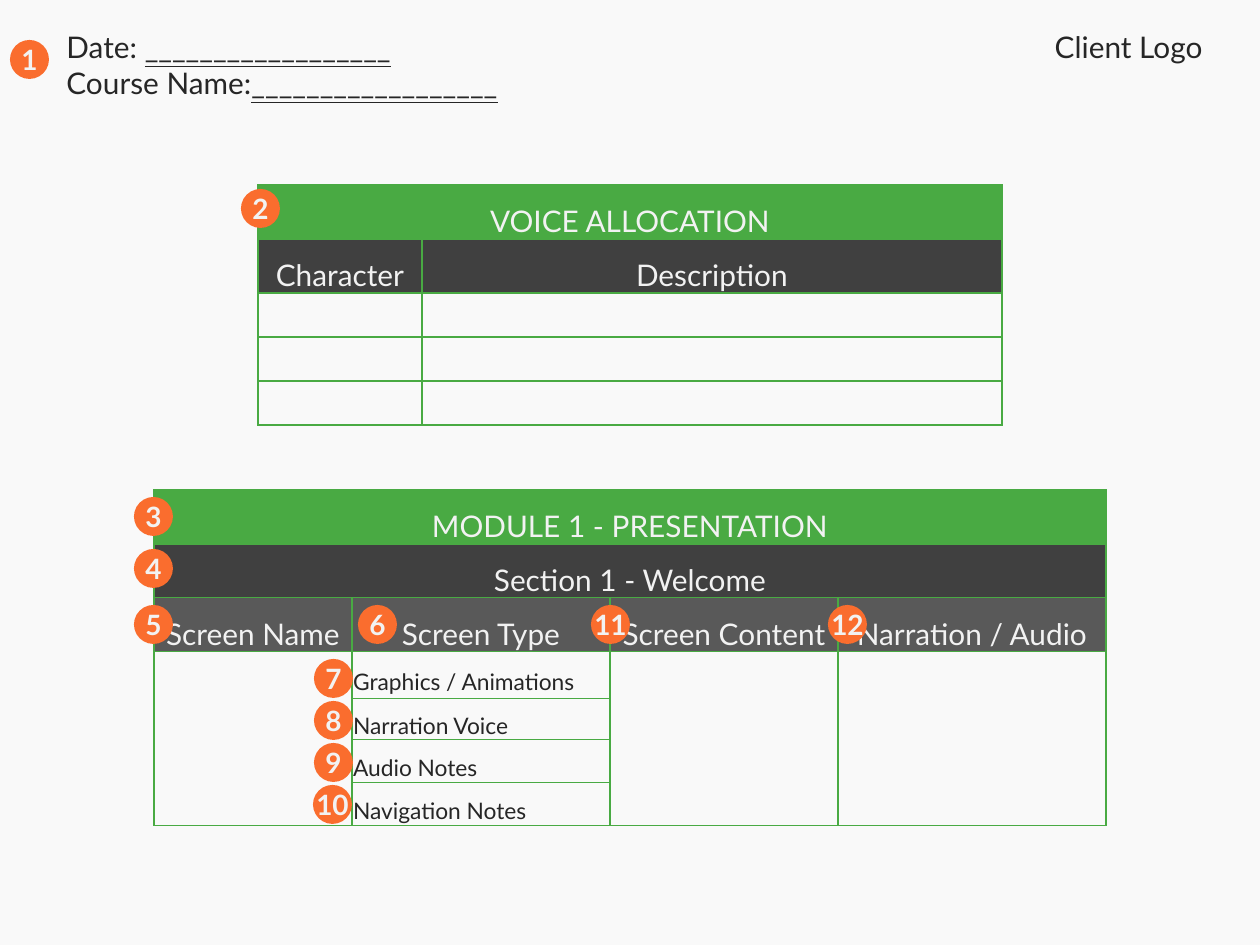
from lxml import etree
from pptx import Presentation
from pptx import util as u
from pptx.dml.color import RGBColor
from pptx.enum import shapes, text
from pptx.oxml.ns import qn

PX = 914400 // 126
FONT = "Lato"
COLORS = {
    "paper": "F9F9F9", "ink": "262626", "light": "F2F2F2", "green": "49AA43",
    "dark": "404040", "gray": "595959", "orange": "FA6D2E",
}
CENTER, LEFT, RIGHT = text.PP_ALIGN.CENTER, text.PP_ALIGN.LEFT, text.PP_ALIGN.RIGHT
BLANK = "_" * 18

# number: left and top of its circle
BADGES = {
    1: (10, 40), 2: (241, 189), 3: (134, 497), 4: (134, 549), 5: (134, 605),
    6: (358, 605), 7: (314, 659), 8: (314, 701), 9: (314, 743),
    11: (591, 605), 12: (828, 605), 10: (313, 785),
}


def px(*values):
    return [u.Emu(v * PX) for v in values]


def rgb(name):
    return RGBColor.from_string(COLORS[name])


def add_text(p, content, size=17, color="ink", bold=False, underline=False,
             align=LEFT, spacing=None):
    p.alignment = align
    if spacing:
        p.line_spacing = spacing
    r = p.add_run()
    r.text = content
    r.font.name, r.font.size = FONT, u.Pt(size)
    r.font.bold, r.font.underline = bold, underline
    r.font.color.rgb = rgb(color)


def add_box(parent, x, y, w, h, wrap=True):
    tf = parent.add_textbox(*px(x, y, w, h)).text_frame
    tf.word_wrap = wrap
    tf.auto_size = text.MSO_AUTO_SIZE.SHAPE_TO_FIT_TEXT
    return tf


def add_badge(s, number, x, y):
    """Group a circle with its number centred over it."""
    d = 39
    w = 49 if number < 10 else 59
    group = s.shapes.add_group_shape().shapes
    sp = group.add_shape(shapes.MSO_SHAPE.OVAL, *px(x, y, d, d))
    sp.shadow.inherit = False
    sp.fill.solid()
    sp.fill.fore_color.rgb = rgb("orange")
    sp.line.fill.background()
    tf = add_box(group, x - (w - d) // 2, y - 4, w, 47, wrap=False)
    add_text(tf.paragraphs[0], str(number), size=16, color="light", bold=True, align=CENTER)


def set_borders(cell):
    tc_pr = cell._tc.get_or_add_tcPr()
    for i, side in enumerate(("lnL", "lnR", "lnT", "lnB")):
        ln = etree.Element(qn(f"a:{side}"), w=str(u.Pt(1)))
        fill = etree.SubElement(ln, qn("a:solidFill"))
        etree.SubElement(fill, qn("a:srgbClr"), val=COLORS["green"])
        tc_pr.insert(i, ln)


def add_grid(s, x, y, cols, rows, header_fills, inset):
    """Add a bordered table whose first rows take header_fills."""
    table = s.shapes.add_table(len(rows), len(cols),
                               *px(x, y, sum(cols), sum(rows))).table
    table.first_row = table.horz_banding = False
    for col, w in zip(table.columns, cols):
        col.width = u.Emu(w * PX)
    for i, (row, h) in enumerate(zip(table.rows, rows)):
        row.height = u.Emu(h * PX)
        for cell in row.cells:
            cell.margin_left = cell.margin_right = u.Inches(inset)
            cell.margin_top = cell.margin_bottom = 0
            cell.vertical_anchor = text.MSO_ANCHOR.MIDDLE
            cell.fill.solid()
            cell.fill.fore_color.rgb = rgb(header_fills[i] if i < len(header_fills) else "paper")
            set_borders(cell)
    return table


def fill_cell(cell, content, **fmt):
    add_text(cell.text_frame.paragraphs[0], content, spacing=1.5, **fmt)


def fill_headers(table, titles, labels):
    """Write full-width title rows, then one row of column labels."""
    last = len(table.columns) - 1
    for i, title in enumerate(titles):
        table.cell(i, 0).merge(table.cell(i, last))
        fill_cell(table.cell(i, 0), title, color="light", align=CENTER)
    for j, label in enumerate(labels):
        fill_cell(table.cell(len(titles), j), label, color="light", align=CENTER)


def add_voice_table(s):
    table = add_grid(s, 258, 185, [164, 580], [54, 54, 44, 44, 44], ["green", "dark"], 0.07)
    fill_headers(table, ["VOICE ALLOCATION"], ["Character", "Description"])


def add_module_table(s):
    table = add_grid(s, 154, 490, [198, 258, 228, 268], [54, 53, 54, 47, 41, 43, 43],
                     ["green", "dark", "gray"], 0.01)
    fill_headers(table, ["MODULE 1 - PRESENTATION", "Section 1 - Welcome"],
                 ["Screen Name", "Screen Type", "Screen Content", "Narration / Audio"])
    for j in (0, 2, 3):
        table.cell(3, j).merge(table.cell(6, j))
    notes = ["Graphics / Animations", "Narration Voice", "Audio Notes", "Navigation Notes"]
    for i, note in enumerate(notes, start=3):
        fill_cell(table.cell(i, 1), note, size=13)


def add_page_header(s):
    tf = add_box(s.shapes, 54, 23, 546, 84)
    for p, label in ((tf.paragraphs[0], "Date: "), (tf.add_paragraph(), "Course Name:")):
        add_text(p, label)
        add_text(p, BLANK, underline=True)
    tf = add_box(s.shapes, 669, 23, 546, 49)
    add_text(tf.paragraphs[0], "Client Logo", align=RIGHT)


def main():
    prs = Presentation()
    prs.slide_width, prs.slide_height = px(1260, 945)
    s = prs.slides.add_slide(prs.slide_layouts[6])
    s.background.fill.solid()
    s.background.fill.fore_color.rgb = rgb("paper")
    add_voice_table(s)
    add_module_table(s)
    add_page_header(s)
    for number, (x, y) in BADGES.items():
        add_badge(s, number, x, y)
    prs.save("out.pptx")


if __name__ == "__main__":
    main()
